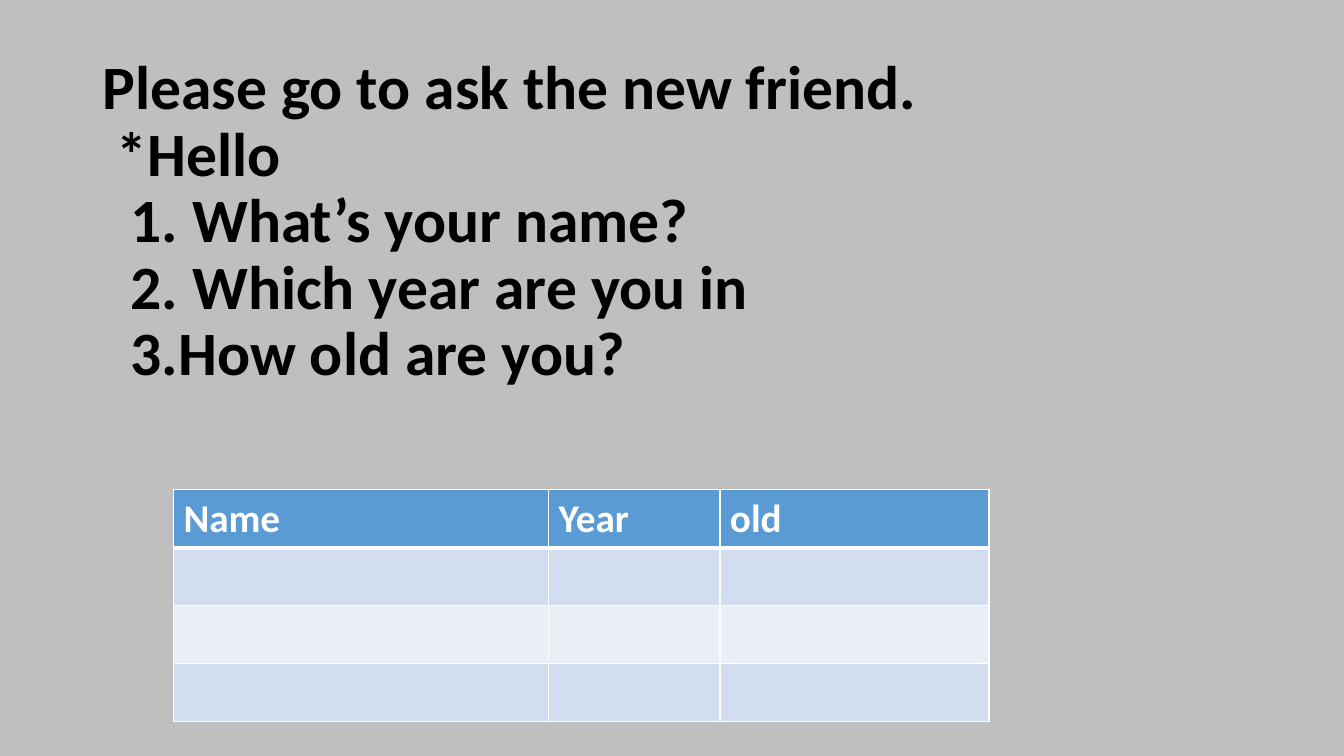
from lxml.etree import SubElement as Sub
from pptx import Presentation
from pptx.dml.color import RGBColor as Rgb
from pptx.oxml.ns import qn
from pptx.util import Inches as In, Pt

THEME = {
    "back": "BFBFBF",
    "head": "5B9BD5",
    "bands": ["D2DEEF", "EAEFF7"],
    "rule": "FFFFFF",
    "title": {"name": "Calibri", "size": Pt(44), "bold": True, "ink": "000000"},
    "label": {"name": "Calibri", "size": Pt(28), "bold": True, "ink": "FFFFFF"},
}
WIDE, HIGH = 13.33, 7.5


def style(font, form):
    for key, val in form.items():
        if key == "ink":
            font.color.rgb = Rgb.from_string(val)
        else:
            setattr(font, key, val)


def edge(cell, side, width):
    """Draw one border of a cell; side is L, R, T or B."""
    line = Sub(cell._tc.get_or_add_tcPr(), qn("a:ln" + side), w=str(Pt(width)))
    fill = Sub(line, qn("a:solidFill"))
    Sub(fill, qn("a:srgbClr"), val=THEME["rule"])


deck = Presentation()
deck.slide_width, deck.slide_height = In(WIDE), In(HIGH)
slide = deck.slides.add_slide(deck.slide_layouts[6])
slide.background.fill.solid()
slide.background.fill.fore_color.rgb = Rgb.from_string(THEME["back"])

# Questions, each with its indent in steps
STEP = Pt(10)
lines = [
    (0, "Please go to ask the new friend."),
    (1, "*Hello"),
    (2, "1. What’s your name?"),
    (2, "2. Which year are you in"),
    (2, "3.How old are you?"),
]
box = slide.shapes.add_textbox(In(0.92), In(0.51), In(11.5), In(HIGH / 2))
frame = box.text_frame
frame.word_wrap = True
for num, (level, text) in enumerate(lines):
    para = frame.paragraphs[0] if num == 0 else frame.add_paragraph()
    para.line_spacing = 0.9
    para._p.get_or_add_pPr().set("marL", str(level * STEP))
    run = para.add_run()
    run.text = text
    style(run.font, THEME["title"])

# Answer table
heads = ["Name", "Year", "old"]
shares = [0.46, 0.21, 0.33]
ROWS, SPAN, TALL = 4, 8.09, 2.3
table = slide.shapes.add_table(
    ROWS, len(heads), In(1.72), In(4.86), In(SPAN), In(TALL)).table
for col, share in zip(table.columns, shares):
    col.width = In(SPAN * share)
for row in range(ROWS):
    for col, head in enumerate(heads):
        cell = table.cell(row, col)
        for side in "LRTB":
            thick = (row, side) in [(0, "B"), (1, "T")]
            edge(cell, side, 3 if thick else 1)
        tint = THEME["bands"][(row - 1) % 2] if row else THEME["head"]
        cell.fill.solid()
        cell.fill.fore_color.rgb = Rgb.from_string(tint)
        if row == 0:
            run = cell.text_frame.paragraphs[0].add_run()
            run.text = head
            style(run.font, THEME["label"])

deck.save("out.pptx")
